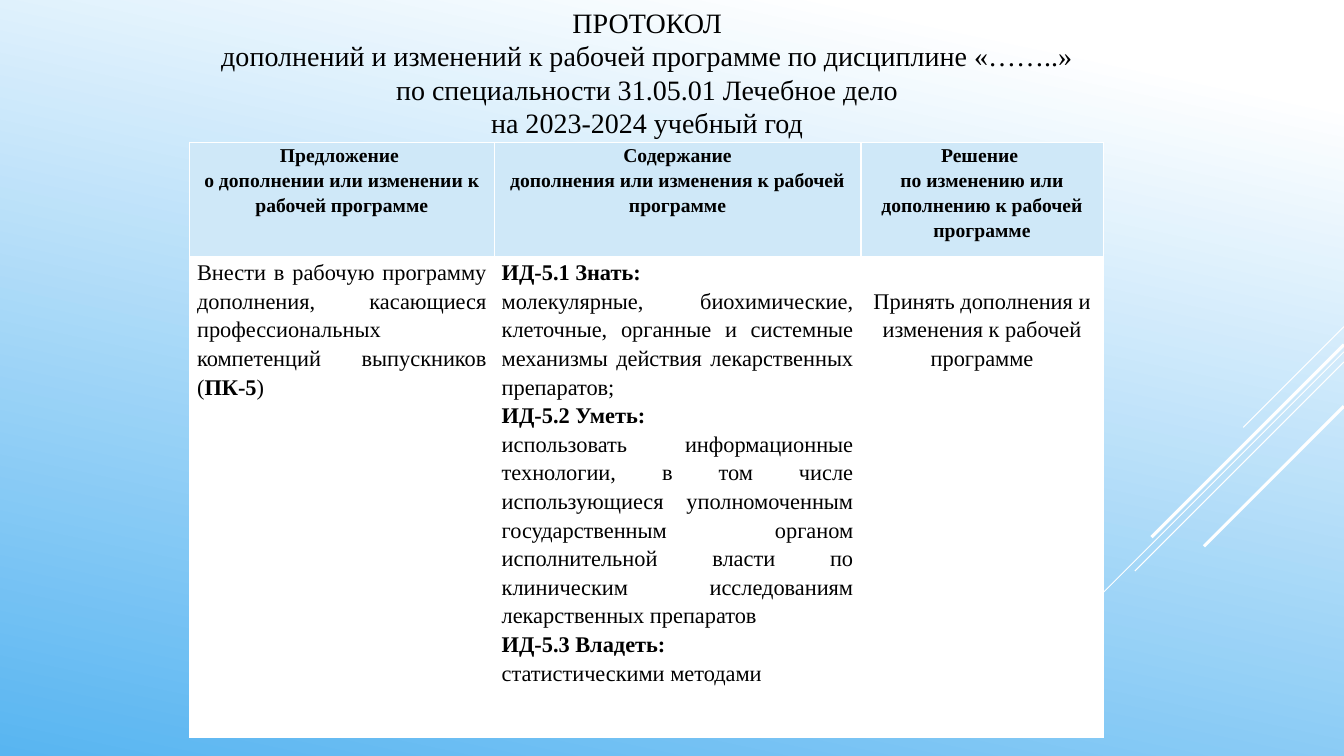
import pptx
import pptx.util
import pptx.dml.color
import pptx.enum.shapes
import pptx.enum.text
import pptx.oxml
import pptx.oxml.ns

Pt = pptx.util.Pt
Align = pptx.enum.text.PP_ALIGN
FONT = "Times New Roman"
TITLE = [
    "ПРОТОКОЛ",
    "дополнений и изменений к рабочей программе по дисциплине «……..»",
    "по специальности 31.05.01 Лечебное дело",
    "на 2023-2024 учебный год",
]
RAYS = [
    (233.3, 72, 0.75),
    (251.3, 234.7, 0.75),
    (258.5, 149.4, 0.75),
    (246.2, 137.5, 2.25),
    (290.2, 100, 2.25),
]
HEADERS = [
    ["Предложение ", "о дополнении или изменении к рабочей программе"],
    ["Содержание", "дополнения или изменения к рабочей программе"],
    ["Решение ", "по изменению или дополнению к рабочей программе"],
]
PROPOSAL = [[
    ("Внести в рабочую программу дополнения, касающиеся "
     "профессиональных компетенций выпускников (", False),
    ("ПК-5", True),
    (")", False),
]]
CONTENT = [
    [("ИД-5.1 Знать: ", True)],
    [("молекулярные, биохимические, клеточные, органные и системные "
      "механизмы действия лекарственных препаратов;", False)],
    [("ИД-5.2 Уметь: ", True)],
    [("использовать информационные технологии, в том числе использующиеся "
      "уполномоченным государственным органом исполнительной власти по "
      "клиническим исследованиям лекарственных препаратов", False)],
    [("ИД-5.3 Владеть:", True)],
    [("статистическими методами", False)],
]
DECISION = [[("Принять дополнения и изменения к рабочей программе", False)]]


def color(value):
    return pptx.dml.color.RGBColor.from_string(value)


def format_run(run, size, bold=False):
    run.font.name = FONT
    run.font.size = Pt(size)
    run.font.bold = bold
    run.font.color.rgb = color("000000")


def set_background(slide):
    fill = slide.background.fill
    fill.gradient()
    fill.gradient_angle = 258
    for stop, position, value in zip(fill.gradient_stops, (0.1, 1), ("FFFFFF", "58B5F1")):
        stop.position = position
        stop.color.rgb = color(value)


def add_ray(slide, top, length, width):
    line = slide.shapes.add_connector(
        pptx.enum.shapes.MSO_CONNECTOR.STRAIGHT,
        Pt(960), Pt(top), Pt(960 - length), Pt(top + length))
    line.line.color.rgb = color("FFFFFF")
    line.line.width = Pt(width)
    properties = line._element.spPr
    properties.append(properties.makeelement(pptx.oxml.ns.qn("a:effectLst"), {}))


def set_title(slide):
    title = slide.shapes.title
    title.left, title.top, title.width, title.height = Pt(38.5), Pt(0), Pt(847.5), Pt(104.4)
    frame = title.text_frame
    frame.text = "\n".join(TITLE)
    frame.word_wrap = True
    frame.auto_size = pptx.enum.text.MSO_AUTO_SIZE.NONE
    frame.vertical_anchor = pptx.enum.text.MSO_ANCHOR.TOP
    for paragraph in frame.paragraphs:
        paragraph.alignment = Align.CENTER
        paragraph.space_before = Pt(0)
        paragraph.line_spacing = 1
        for run in paragraph.runs:
            format_run(run, 20)


def set_borders(cell):
    properties = cell._tc.get_or_add_tcPr()
    for index, side in enumerate(("lnL", "lnR", "lnT", "lnB")):
        properties.insert(index, pptx.oxml.parse_xml(
            f'<a:{side} {pptx.oxml.ns.nsdecls("a")} w="{Pt(1)}"><a:solidFill>'
            f'<a:srgbClr val="FFFFFF"/></a:solidFill></a:{side}>'))


def fill_cell(cell, paragraphs, size, alignment, background, top=0):
    cell.margin_left = cell.margin_right = Pt(5.4)
    cell.margin_top, cell.margin_bottom = Pt(top), Pt(0)
    cell.fill.solid()
    cell.fill.fore_color.rgb = color(background)
    set_borders(cell)
    frame = cell.text_frame
    for index, parts in enumerate(paragraphs):
        paragraph = frame.add_paragraph() if index else frame.paragraphs[0]
        paragraph.alignment = alignment
        paragraph.line_spacing = 1.15
        for text, bold in parts:
            run = paragraph.add_run()
            run.text = text
            format_run(run, size, bold)


def add_protocol_table(slide):
    table = slide.shapes.add_table(2, 3, Pt(135.4), Pt(101.5), Pt(652.6), Pt(425.5)).table
    for column, width in zip(table.columns, (217.6, 262, 173)):
        column.width = Pt(width)
    for row, height in zip(table.rows, (82, 343.5)):
        row.height = Pt(height)
    for index, lines in enumerate(HEADERS):
        fill_cell(table.cell(0, index), [[(line, True)] for line in lines],
                  14, Align.CENTER, "CFE8F8")
    fill_cell(table.cell(1, 0), PROPOSAL, 16, Align.JUSTIFY, "FFFFFF")
    fill_cell(table.cell(1, 1), CONTENT, 16, Align.JUSTIFY, "FFFFFF")
    fill_cell(table.cell(1, 2), DECISION, 16, Align.CENTER, "FFFFFF", top=20.5)


def main():
    presentation = pptx.Presentation()
    presentation.slide_width, presentation.slide_height = Pt(960), Pt(540)
    slide = presentation.slides.add_slide(presentation.slide_layouts[5])
    set_background(slide)
    for ray in RAYS:
        add_ray(slide, *ray)
    add_protocol_table(slide)
    set_title(slide)
    presentation.save("out.pptx")


if __name__ == "__main__":
    main()
